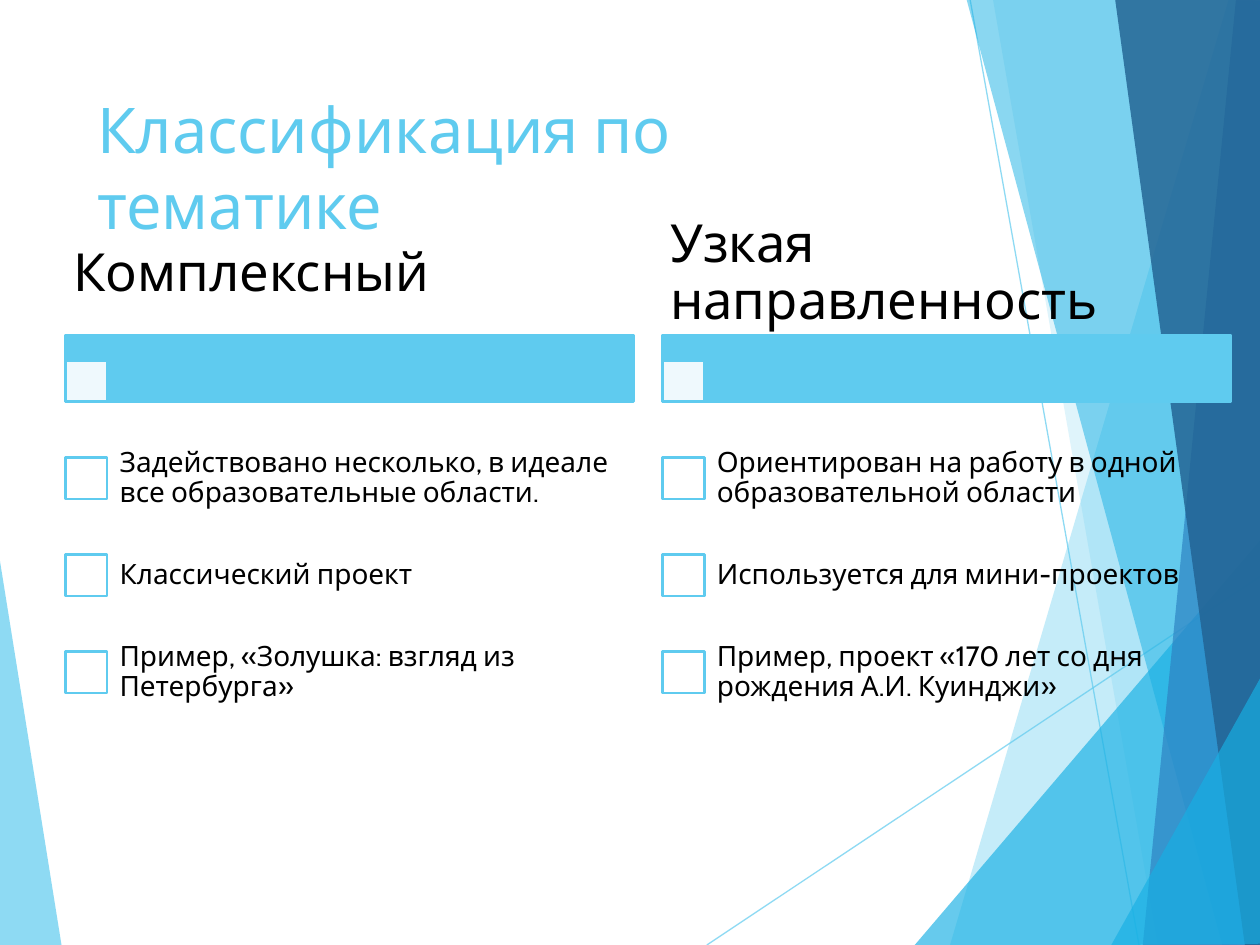
from dataclasses import dataclass

import pptx
import pptx.dml.color
import pptx.dml.fill
import pptx.enum.shapes
import pptx.enum.text
import pptx.oxml.ns
import pptx.oxml.xmlchemy
import pptx.slide
import pptx.text.text
import pptx.util
from pptx.util import Inches

COLORS = {
    "sky": "5FCBEF",
    "cyan": "17B0E4",
    "blue": "2E83C3",
    "navy": "226292",
    "white": "FFFFFF",
    "black": "000000",
}
FONT = "Cabin"
COLUMN_WIDTH = 4.51
BOX_SIZE = 0.33
ROW_TOP, ROW_HEIGHT = 3.41, 0.77


@dataclass
class Facet:
    color: str
    opacity: int
    points: list[tuple[float, float]]


@dataclass
class Ray:
    start: tuple[float, float]
    end: tuple[float, float]


@dataclass
class Column:
    left: float
    heading: str
    items: list[str]


LEFT_FACET = Facet("sky", 70, [(-0.01, 4.39), (0.49, 7.51), (-0.01, 7.5)])
RAYS = [Ray((5.61, 7.5), (10.01, 4.57)), Ray((7.7, 0), (9.04, 7.5))]
RIGHT_FACETS = [
    Facet("sky", 36, [(9.75, 0), (7.54, 7.5), (10.02, 7.51), (10.01, 0.01)]),
    Facet("sky", 20, [(7.88, -0.01), (9.19, 7.5), (10.01, 7.5), (10.01, -0.01)]),
    Facet("cyan", 66, [(7.26, 7.5), (10, 4.29), (10.01, 7.5)]),
    Facet("cyan", 50, [(7.67, -0.01), (9.7, 7.5), (10.01, 7.49), (10.01, -0.01)]),
    Facet("blue", 70, [(9.81, -0.01), (9.07, 7.5), (10.01, 7.5), (10, -0.01)]),
    Facet("navy", 82, [(8.85, -0.01), (9.88, 7.5), (10.02, 7.5), (10, -0.01)]),
    Facet("cyan", 66, [(8.82, 7.5), (10.02, 5.35), (10.02, 7.49)]),
]
COLUMNS = [
    Column(0.52, "Комплексный", [
        "Задействовано несколько, в идеале все образовательные области.",
        "Классический проект",
        "Пример, «Золушка: взгляд из Петербурга»",
    ]),
    Column(5.26, "Узкая направленность", [
        "Ориентирован на работу в одной образовательной области",
        "Используется для мини-проектов",
        "Пример, проект «170 лет со дня рождения А.И. Куинджи»",
    ]),
]


def rgb(name: str) -> pptx.dml.color.RGBColor:
    return pptx.dml.color.RGBColor.from_string(COLORS[name])


def paint(fill: pptx.dml.fill.FillFormat, color: str, opacity: int = 100) -> None:
    fill.solid()
    fill.fore_color.rgb = rgb(color)
    if opacity < 100:
        color_element = next(fill._xPr.iter(pptx.oxml.ns.qn("a:srgbClr")))
        alpha = pptx.oxml.xmlchemy.OxmlElement("a:alpha")
        alpha.set("val", str(opacity * 1000))
        color_element.append(alpha)


def draw_facet(page: pptx.slide.Slide, facet: Facet) -> None:
    points = [(Inches(x), Inches(y)) for x, y in facet.points]
    builder = page.shapes.build_freeform(*points[0])
    builder.add_line_segments(points[1:], close=True)
    shape = builder.convert_to_shape()
    shape.shadow.inherit = False
    paint(shape.fill, facet.color, facet.opacity)
    shape.line.fill.background()


def draw_ray(page: pptx.slide.Slide, ray: Ray) -> None:
    ends = [Inches(value) for value in (*ray.start, *ray.end)]
    line = page.shapes.add_connector(pptx.enum.shapes.MSO_CONNECTOR.STRAIGHT, *ends)
    line.line.width = pptx.util.Pt(0.75)
    paint(line.line.fill, "sky", 70)
    line._element.spPr.append(pptx.oxml.xmlchemy.OxmlElement("a:effectLst"))


def draw_box(page: pptx.slide.Slide, left: float, top: float, width: float,
             height: float, color: str, opacity: int = 100) -> None:
    box = page.shapes.add_shape(
        pptx.enum.shapes.MSO_SHAPE.RECTANGLE,
        Inches(left), Inches(top), Inches(width), Inches(height))
    box.shadow.inherit = False
    paint(box.fill, color, opacity)
    box.line.color.rgb = rgb("sky")
    box.line.width = pptx.util.Pt(1.5)


def style_font(font: pptx.text.text.Font, size: int, color: str) -> None:
    font.name = FONT
    font.size = pptx.util.Pt(size)
    font.color.rgb = rgb(color)


def draw_text(page: pptx.slide.Slide, text: str, left: float, top: float, width: float,
              height: float, size: int, inset_x: float, inset_y: float) -> None:
    box = page.shapes.add_textbox(Inches(left), Inches(top), Inches(width), Inches(height))
    frame = box.text_frame
    frame.word_wrap = True
    frame.vertical_anchor = pptx.enum.text.MSO_ANCHOR.MIDDLE
    frame.margin_left = frame.margin_right = Inches(inset_x)
    frame.margin_top = frame.margin_bottom = Inches(inset_y)
    para = frame.paragraphs[0]
    para.text = text
    para.line_spacing = 0.9
    style_font(para.font, size, "black")


def draw_title(page: pptx.slide.Slide, text: str) -> None:
    title = page.shapes.title
    title.left, title.top = Inches(0.67), Inches(0.67)
    title.width, title.height = Inches(6.94), Inches(1.44)
    frame = title.text_frame
    frame.vertical_anchor = pptx.enum.text.MSO_ANCHOR.TOP
    para = frame.paragraphs[0]
    para.text = text
    para.alignment = pptx.enum.text.PP_ALIGN.LEFT
    style_font(para.font, 36, "sky")
    # Bring the title in front of the background facets.
    title.element.getparent().append(title.element)


def draw_column(page: pptx.slide.Slide, column: Column) -> None:
    draw_box(page, column.left, 2.66, COLUMN_WIDTH, 0.53, "sky")
    draw_box(page, column.left, 2.86, BOX_SIZE, BOX_SIZE, "white", 90)
    draw_text(page, column.heading, column.left, 1.7, COLUMN_WIDTH, 0.95, 30, 0.06, 0.04)
    for row, item in enumerate(column.items):
        top = ROW_TOP + row * ROW_HEIGHT
        box_top = top + (ROW_HEIGHT - BOX_SIZE) / 2
        draw_box(page, column.left, box_top, BOX_SIZE, BOX_SIZE, "white")
        draw_text(page, item, column.left + 0.31, top, COLUMN_WIDTH - 0.31,
                  ROW_HEIGHT, 16, 0.12, 0.12)


def main() -> None:
    deck = pptx.Presentation()
    deck.slide_width, deck.slide_height = Inches(10), Inches(7.5)
    page = deck.slides.add_slide(deck.slide_layouts.get_by_name("Title Only"))
    draw_facet(page, LEFT_FACET)
    for ray in RAYS:
        draw_ray(page, ray)
    for facet in RIGHT_FACETS:
        draw_facet(page, facet)
    draw_title(page, "Классификация по тематике")
    for column in COLUMNS:
        draw_column(page, column)
    deck.save("out.pptx")


if __name__ == "__main__":
    main()
